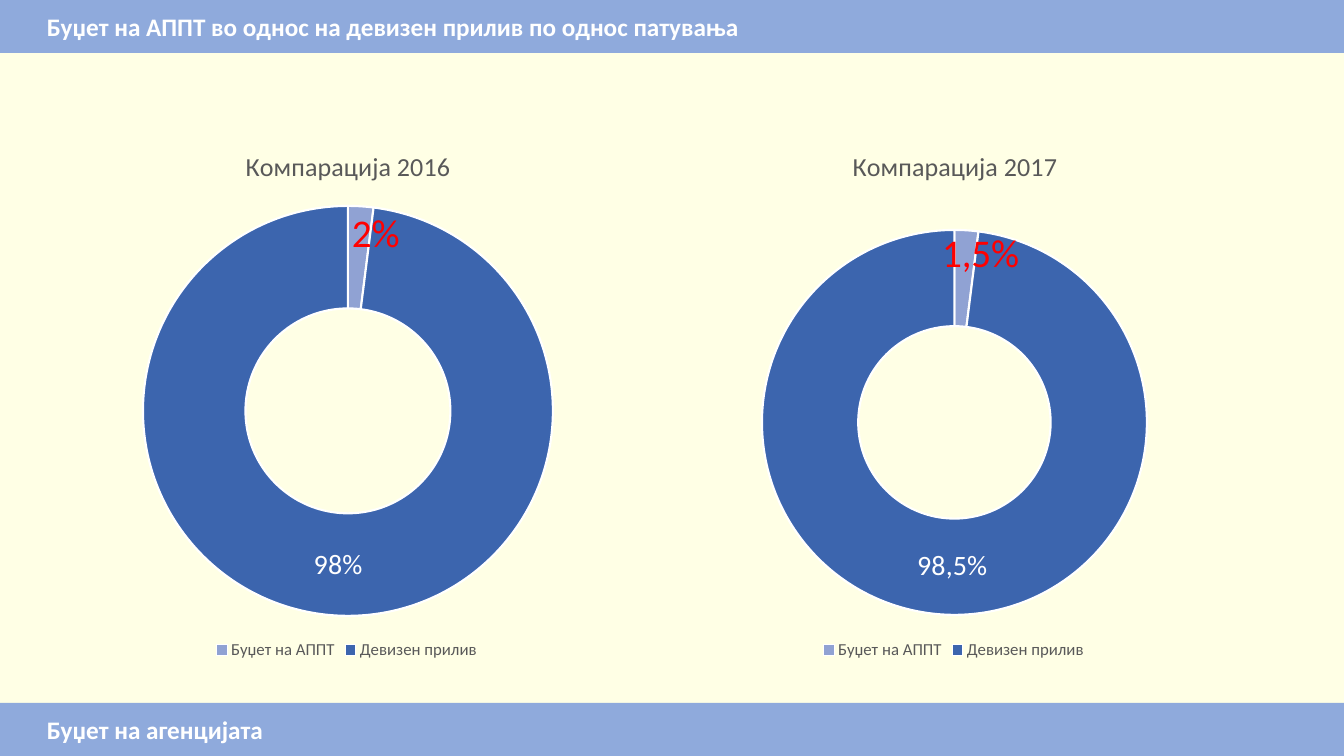
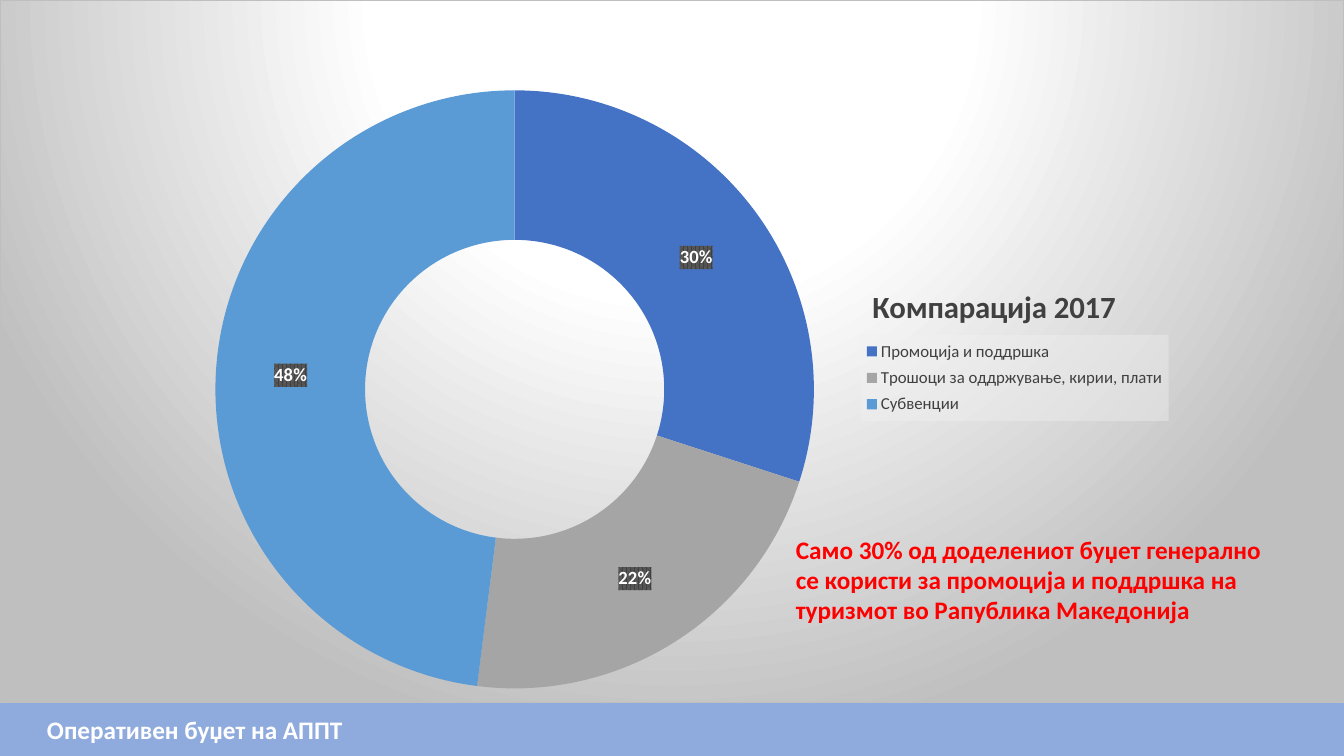
from dataclasses import dataclass
from typing import NamedTuple, Optional

from lxml.etree import SubElement, _Element
from pptx import Presentation
from pptx.chart.chart import Chart
from pptx.chart.data import CategoryChartData
from pptx.dml.color import RGBColor
from pptx.enum.chart import XL_CHART_TYPE, XL_LEGEND_POSITION
from pptx.enum.shapes import MSO_SHAPE
from pptx.enum.text import MSO_ANCHOR, MSO_AUTO_SIZE, PP_ALIGN
from pptx.oxml import parse_xml
from pptx.oxml.ns import nsdecls, qn
from pptx.slide import Slide
from pptx.util import Emu, Pt

PAGE_WIDTH, PAGE_HEIGHT, BAND_HEIGHT = 1344, 756, 53
FOOTER_TOP = PAGE_HEIGHT - BAND_HEIGHT
EMU_PER_PAGE = 12192000
FONT = "Calibri"
COLORS = {
    "page": "FFFFE5", "band": "8FAADC", "white": "FFFFFF", "red": "FF0000",
    "text": "595959", "dark_text": "404040", "silver": "BFBFBF", "legend": "F2F2F2",
    "budget": "90A2D3", "inflow": "3C65AE",
    "promotion": "4472C4", "running_costs": "A5A5A5", "subsidies": "5B9BD5",
}


class Frame(NamedTuple):
    left: int
    top: int
    width: int
    height: int


class PointLabel(NamedTuple):
    """A written label for one slice, shifted from its usual place."""
    text: str
    size: int
    color: str
    shift: tuple[int, int] = (0, 0)


class Slice(NamedTuple):
    name: str
    value: int
    color: str
    label: Optional[PointLabel] = None


@dataclass
class Doughnut:
    frame: Frame
    ring: Frame
    title: str
    title_at: tuple[int, int]
    slices: list[Slice]
    hole: int = 75
    title_size: float = 18.6
    label_size: float = 20
    text_color: str = "text"
    bold: bool = False
    outlined: bool = True
    legend: Optional[Frame] = None
    shaded: bool = False


APPT, INFLOW = "Буџет на АППТ", "Девизен прилив"
YEARS = [
    Doughnut(
        Frame(79, 127, 536, 537), Frame(143, 206, 410, 410), "Компарација 2016", (241, 143),
        [Slice(APPT, 2, "budget", PointLabel("2%", 28, "red", (18, -23))),
         Slice(INFLOW, 98, "inflow")],
    ),
    Doughnut(
        Frame(686, 127, 536, 537), Frame(762, 230, 385, 385), "Компарација 2017", (848, 143),
        [Slice(APPT, 2, "budget", PointLabel("1,5%", 28, "red", (17, -24))),
         Slice(INFLOW, 98, "inflow", PointLabel("98,5%", 20, "white", (7, -1)))],
    ),
]
OPERATING_BUDGET = Doughnut(
    Frame(0, 0, PAGE_WIDTH, FOOTER_TOP), Frame(215, 90, 599, 599),
    "Компарација 2017", (867, 280),
    [Slice("Промоција и поддршка", 30, "promotion"),
     Slice("Трошоци за оддржување, кирии, плати", 22, "running_costs"),
     Slice("Субвенции", 48, "subsidies")],
    hole=50, title_size=22, label_size=13.3, text_color="dark_text", bold=True,
    outlined=False, legend=Frame(861, 335, 308, 86), shaded=True,
)
REMARK = [
    "Само 30% од доделениот буџет генерално",
    "се користи за промоција и поддршка на",
    "туризмот во Рапублика Македонија",
]


def px(length: int) -> Emu:
    return Emu(round(length * EMU_PER_PAGE / PAGE_WIDTH))


def rgb(color: str) -> RGBColor:
    return RGBColor.from_string(COLORS[color])


def style_font(font, size: float, color: str, bold: bool = False) -> None:
    font.name, font.size, font.bold = FONT, Pt(size), bold
    font.color.rgb = rgb(color)


def color_xml(color: str, extra: str = "") -> str:
    return f'<a:srgbClr val="{COLORS[color]}">{extra}</a:srgbClr>'


def shape_properties(content: str) -> _Element:
    return parse_xml(f'<c:spPr {nsdecls("c", "a")}>{content}</c:spPr>')


def set_layout(part: _Element, index: int, **settings: object) -> None:
    """Give a chart part a manual layout as its child number index."""
    for old in part.findall(qn("c:layout")):
        part.remove(old)
    layout = parse_xml(f'<c:layout {nsdecls("c")}><c:manualLayout/></c:layout>')
    for tag, value in settings.items():
        SubElement(layout[0], qn(f"c:{tag}")).set("val", str(value))
    part.insert(index, layout)


def place(part: _Element, index: int, inside: Frame, left: int, top: int,
          size: Optional[tuple[int, int]] = None, inner: bool = False) -> None:
    """Place a chart part by its page position."""
    settings: dict[str, object] = {"layoutTarget": "inner"} if inner else {}
    settings |= {"xMode": "edge", "yMode": "edge",
                 "x": round((left - inside.left) / inside.width, 4),
                 "y": round((top - inside.top) / inside.height, 4)}
    if size:
        settings |= {"w": round(size[0] / inside.width, 4), "h": round(size[1] / inside.height, 4)}
    set_layout(part, index, **settings)


def format_slices(chart: Chart, doughnut: Doughnut) -> None:
    series = chart.plots[0].series[0]
    labels = series.data_labels
    labels.show_percentage, labels.show_value = True, False
    labels.number_format, labels.number_format_is_linked = "0%", False
    style_font(labels.font, doughnut.label_size, "white", doughnut.bold)
    if doughnut.shaded:
        pattern = (f'<a:pattFill prst="pct75"><a:fgClr>{color_xml("dark_text")}</a:fgClr>'
                   f'<a:bgClr>{color_xml("text")}</a:bgClr></a:pattFill>')
        chart.element.find(f'.//{qn("c:ser")}/{qn("c:dLbls")}/{qn("c:numFmt")}').addnext(
            shape_properties(pattern))
    for index, part in enumerate(doughnut.slices):
        point = series.points[index]
        point.format.fill.solid()
        point.format.fill.fore_color.rgb = rgb(part.color)
        if doughnut.outlined:
            point.format.line.color.rgb = rgb("white")
            point.format.line.width = Pt(1.5)
        else:
            point.format.line.fill.background()
        if part.label:
            frame = point.data_label.text_frame
            frame.text = part.label.text
            style_font(frame.paragraphs[0].runs[0].font, part.label.size, part.label.color)
            across, down = part.label.shift
            item = chart.element.findall(f'.//{qn("c:dLbl")}')[-1]
            set_layout(item, 1, x=round(across / doughnut.frame.width, 4),
                       y=round(down / doughnut.frame.height, 4))


def format_legend(chart: Chart, doughnut: Doughnut) -> None:
    chart.has_legend = True
    legend = chart.legend
    legend.position = XL_LEGEND_POSITION.RIGHT if doughnut.legend else XL_LEGEND_POSITION.BOTTOM
    legend.include_in_layout = False
    style_font(legend.font, 12, doughnut.text_color)
    if doughnut.legend:
        part = chart.element.find(f'.//{qn("c:legend")}')
        left, top, *size = doughnut.legend
        place(part, 1, doughnut.frame, left, top, tuple(size))
        veil = color_xml("legend", '<a:alpha val="39000"/>')
        part.find(qn("c:overlay")).addnext(
            shape_properties(f"<a:solidFill>{veil}</a:solidFill>"))


def chart_background(shaded: bool) -> _Element:
    if not shaded:
        return shape_properties("<a:noFill/><a:ln><a:noFill/></a:ln>")
    stops = "".join(
        f'<a:gs pos="{position}000">{color_xml(color)}</a:gs>'
        for position, color in ((0, "white"), (39, "white"), (100, "silver")))
    return shape_properties(
        f'<a:gradFill><a:gsLst>{stops}</a:gsLst><a:path path="circle">'
        '<a:fillToRect l="50000" t="-80000" r="50000" b="180000"/></a:path></a:gradFill>'
        f'<a:ln w="9525"><a:solidFill>{color_xml("silver")}</a:solidFill></a:ln>')


def add_doughnut(page: Slide, doughnut: Doughnut) -> None:
    data = CategoryChartData()
    data.categories = [part.name for part in doughnut.slices]
    data.add_series("Series 1", [part.value for part in doughnut.slices])
    chart = page.shapes.add_chart(
        XL_CHART_TYPE.DOUGHNUT, *map(px, doughnut.frame), data).chart
    chart.font.name, chart.font.size = FONT, Pt(10)
    chart.plots[0].vary_by_categories = True
    chart.element.find(f'.//{qn("c:holeSize")}').set("val", str(doughnut.hole))
    chart.element.find(qn("c:chart")).addnext(chart_background(doughnut.shaded))

    title = chart.chart_title.text_frame
    title.text = doughnut.title
    style_font(title.paragraphs[0].runs[0].font, doughnut.title_size,
               doughnut.text_color, doughnut.bold)
    place(chart.element.find(f'.//{qn("c:title")}'), 1, doughnut.frame, *doughnut.title_at)
    left, top, *size = doughnut.ring
    place(chart.element.find(f'.//{qn("c:plotArea")}'), 0, doughnut.frame,
          left, top, tuple(size), inner=True)
    format_slices(chart, doughnut)
    format_legend(chart, doughnut)


def format_band(band, top: int, text: str) -> None:
    """Turn a shape or placeholder into a full-width band with its caption."""
    band.left, band.top, band.width, band.height = map(
        px, (0, top, PAGE_WIDTH, BAND_HEIGHT))
    band.fill.solid()
    band.fill.fore_color.rgb = rgb("band")
    band.line.fill.background()
    frame = band.text_frame
    frame.text = text
    frame.auto_size, frame.word_wrap = MSO_AUTO_SIZE.NONE, True
    frame.vertical_anchor = MSO_ANCHOR.MIDDLE
    frame.margin_left = px(47)
    frame.margin_top, frame.margin_bottom = 0, px(1)
    paragraph = frame.paragraphs[0]
    paragraph.alignment = PP_ALIGN.LEFT
    style_font(paragraph.runs[0].font, 18, "white", True)


def add_footer_band(page: Slide, text: str) -> None:
    band = page.shapes.add_shape(
        MSO_SHAPE.RECTANGLE, 0, px(FOOTER_TOP), px(PAGE_WIDTH), px(BAND_HEIGHT))
    band.shadow.inherit = False
    format_band(band, FOOTER_TOP, text)


def add_remark(page: Slide, frame: Frame, lines: list[str]) -> None:
    box = page.shapes.add_textbox(*map(px, frame))
    box.text_frame.text = "\n".join(lines)
    box.text_frame.word_wrap = False
    for paragraph in box.text_frame.paragraphs:
        style_font(paragraph.runs[0].font, 18, "red", True)


def main() -> None:
    deck = Presentation()
    deck.slide_width, deck.slide_height = px(PAGE_WIDTH), px(PAGE_HEIGHT)
    background = deck.slide_master.background.fill
    background.solid()
    background.fore_color.rgb = rgb("page")
    title_only = deck.slide_layouts[5]

    page = deck.slides.add_slide(title_only)
    format_band(page.shapes.title, 0,
                "Буџет на АППТ во однос на девизен прилив по однос патувања")
    add_footer_band(page, "Буџет на агенцијата")
    for doughnut in YEARS:
        add_doughnut(page, doughnut)

    page = deck.slides.add_slide(title_only)
    format_band(page.shapes.title, FOOTER_TOP, "Оперативен буџет на АППТ")
    add_doughnut(page, OPERATING_BUDGET)
    add_remark(page, Frame(786, 529, 489, 102), REMARK)
    deck.save("out.pptx")


if __name__ == "__main__":
    main()
